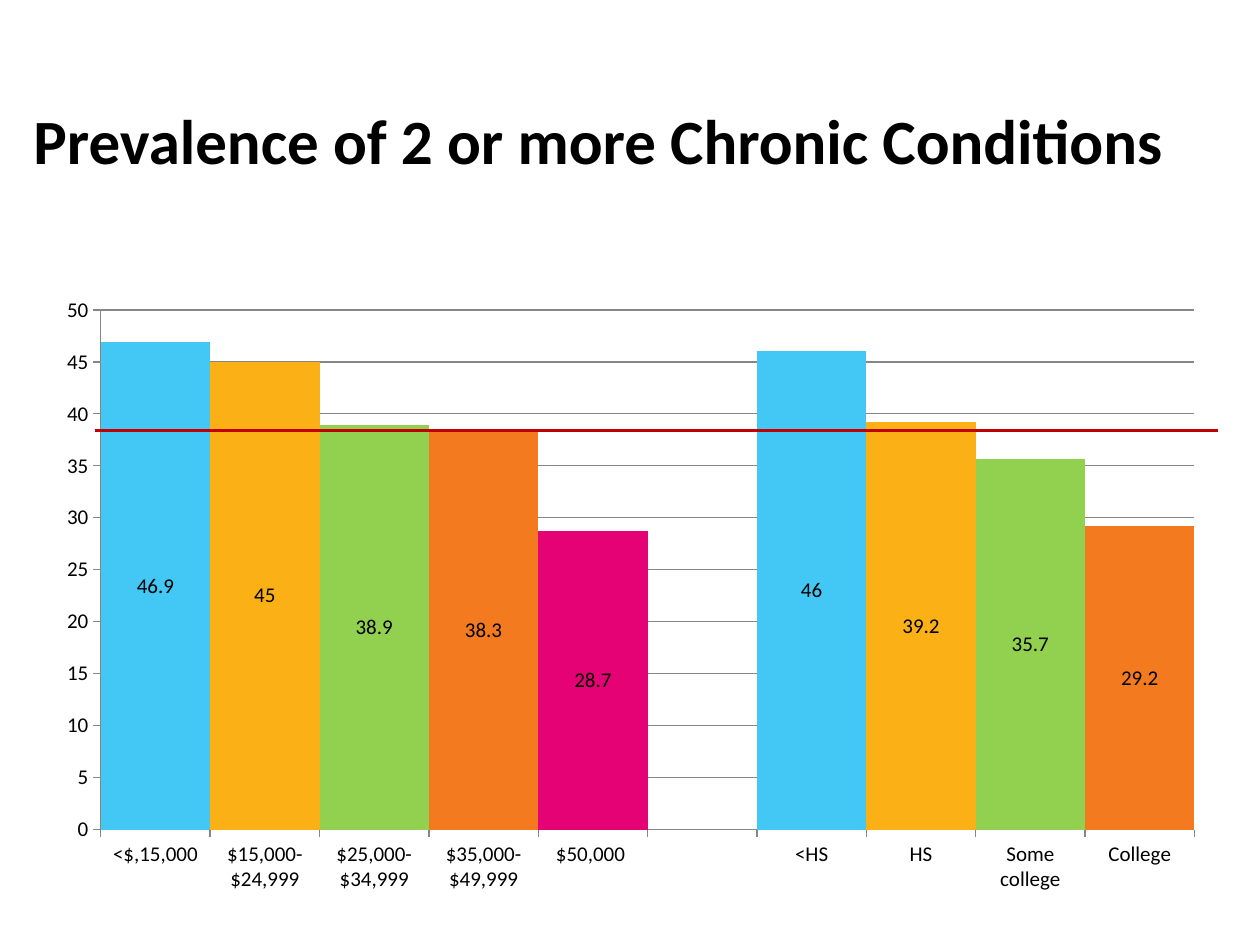
from lxml import etree
from pptx import Presentation
from pptx.chart.data import CategoryChartData
from pptx.dml.color import RGBColor
from pptx.enum.chart import XL_CHART_TYPE as ChartType, XL_LABEL_POSITION as LabelPosition
from pptx.enum.chart import XL_TICK_MARK as TickMark
from pptx.enum.shapes import MSO_CONNECTOR as Connector
from pptx.enum.text import MSO_ANCHOR as Anchor, PP_ALIGN as Align
from pptx.oxml import parse_xml
from pptx.oxml.ns import nsdecls, qn
from pptx.util import Pt

# Content
TITLE = "Prevalence of 2 or more Chronic Conditions"
INCOME = [("<$,15,000", 46.9), ("$15,000-$24,999", 45), ("$25,000-$34,999", 38.9),
          ("$35,000-$49,999", 38.3), ("$50,000 ", 28.7)]
EDUCATION = [("<HS", 46), ("HS", 39.2), ("Some college", 35.7), ("College", 29.2)]
GAP = [("", None)]

# Format
FONT = "Calibri"
BLACK = RGBColor(0x00, 0x00, 0x00)
GRAY = RGBColor(0x86, 0x86, 0x86)
RED = RGBColor(0xC0, 0x00, 0x00)
BLUE = RGBColor(0x43, 0xC7, 0xF4)
AMBER = RGBColor(0xFB, 0xB1, 0x16)
GREEN = RGBColor(0x92, 0xD0, 0x50)
ORANGE = RGBColor(0xF4, 0x7A, 0x20)
PINK = RGBColor(0xE4, 0x02, 0x74)
BAR_COLORS = [BLUE, AMBER, GREEN, ORANGE, PINK]
PLOT_AREA = {"x": 0.05, "y": 0.04, "w": 0.93, "h": 0.84}


def set_font(font, size, bold=False, color=BLACK):
    font.name, font.size, font.bold = FONT, Pt(size), bold
    font.color.rgb = color


def add_text(slide, text, left, top, width, height, size, bold=False):
    frame = slide.shapes.add_textbox(Pt(left), Pt(top), Pt(width), Pt(height)).text_frame
    frame.word_wrap = True
    frame.vertical_anchor = Anchor.MIDDLE
    paragraph = frame.paragraphs[0]
    paragraph.alignment = Align.LEFT
    run = paragraph.add_run()
    run.text = text
    set_font(run.font, size, bold)


def style_axis(axis):
    axis.major_tick_mark = TickMark.OUTSIDE
    axis.minor_tick_mark = TickMark.NONE
    axis.format.line.color.rgb = GRAY
    axis.format.line.width = Pt(0.75)
    set_font(axis.tick_labels.font, 12)


def place_plot_area(chart):
    modes = "".join(f'<c:{side}Mode val="edge"/>' for side in "xy")
    sizes = "".join(f'<c:{key} val="{value}"/>' for key, value in PLOT_AREA.items())
    layout = parse_xml(f'<c:layout {nsdecls("c")}><c:manualLayout><c:layoutTarget val="inner"/>'
                       f'{modes}{sizes}</c:manualLayout></c:layout>')
    plot_area = chart.plots[0]._element.getparent()
    for old_layout in plot_area.findall(qn("c:layout")):
        plot_area.remove(old_layout)
    plot_area.insert(0, layout)


def add_prevalence_chart(slide):
    data = CategoryChartData()
    for category, _ in INCOME + GAP + EDUCATION:
        data.add_category(category)
    data.add_series("Series 1", [value for _, value in INCOME + GAP + EDUCATION])
    chart = slide.shapes.add_chart(ChartType.COLUMN_CLUSTERED, Pt(24), Pt(163),
                                   Pt(672), Pt(353.5), data).chart
    chart.has_title = chart.has_legend = False
    set_font(chart.font, 10)
    place_plot_area(chart)

    # Axes
    style_axis(chart.category_axis)
    value_axis = chart.value_axis
    style_axis(value_axis)
    value_axis.minimum_scale, value_axis.maximum_scale, value_axis.major_unit = 0, 50, 5
    value_axis.has_major_gridlines = True
    value_axis.major_gridlines.format.line.color.rgb = GRAY
    value_axis.major_gridlines.format.line.width = Pt(0.75)

    # Touching bars; each group runs through the same colours
    plot = chart.plots[0]
    plot.gap_width = 0
    plot.vary_by_categories = False
    series = plot.series[0]
    series.format.fill.solid()
    series.format.fill.fore_color.rgb = BLUE
    for start, group in ((0, INCOME), (len(INCOME + GAP), EDUCATION)):
        for index, color in enumerate(BAR_COLORS[:len(group)], start):
            fill = series.points[index].format.fill
            fill.solid()
            fill.fore_color.rgb = color

    # Value labels
    plot.has_data_labels = True
    labels = plot.data_labels
    labels.show_value = True
    labels.position = LabelPosition.CENTER
    set_font(labels.font, 12)


def add_average_line(slide):
    line = slide.shapes.add_connector(Connector.STRAIGHT, Pt(54), Pt(246), Pt(696), Pt(246))
    line.line.color.rgb = RED
    line.line.width = Pt(1.25)
    etree.SubElement(line._element.spPr, qn("a:effectLst"))


def main():
    presentation = Presentation()
    presentation.slide_width, presentation.slide_height = Pt(720), Pt(540)
    slide = presentation.slides.add_slide(presentation.slide_layouts[6])
    add_text(slide, TITLE, 12, 34.5, 696, 90, size=36, bold=True)
    add_prevalence_chart(slide)
    add_average_line(slide)
    presentation.save("out.pptx")


if __name__ == "__main__":
    main()
